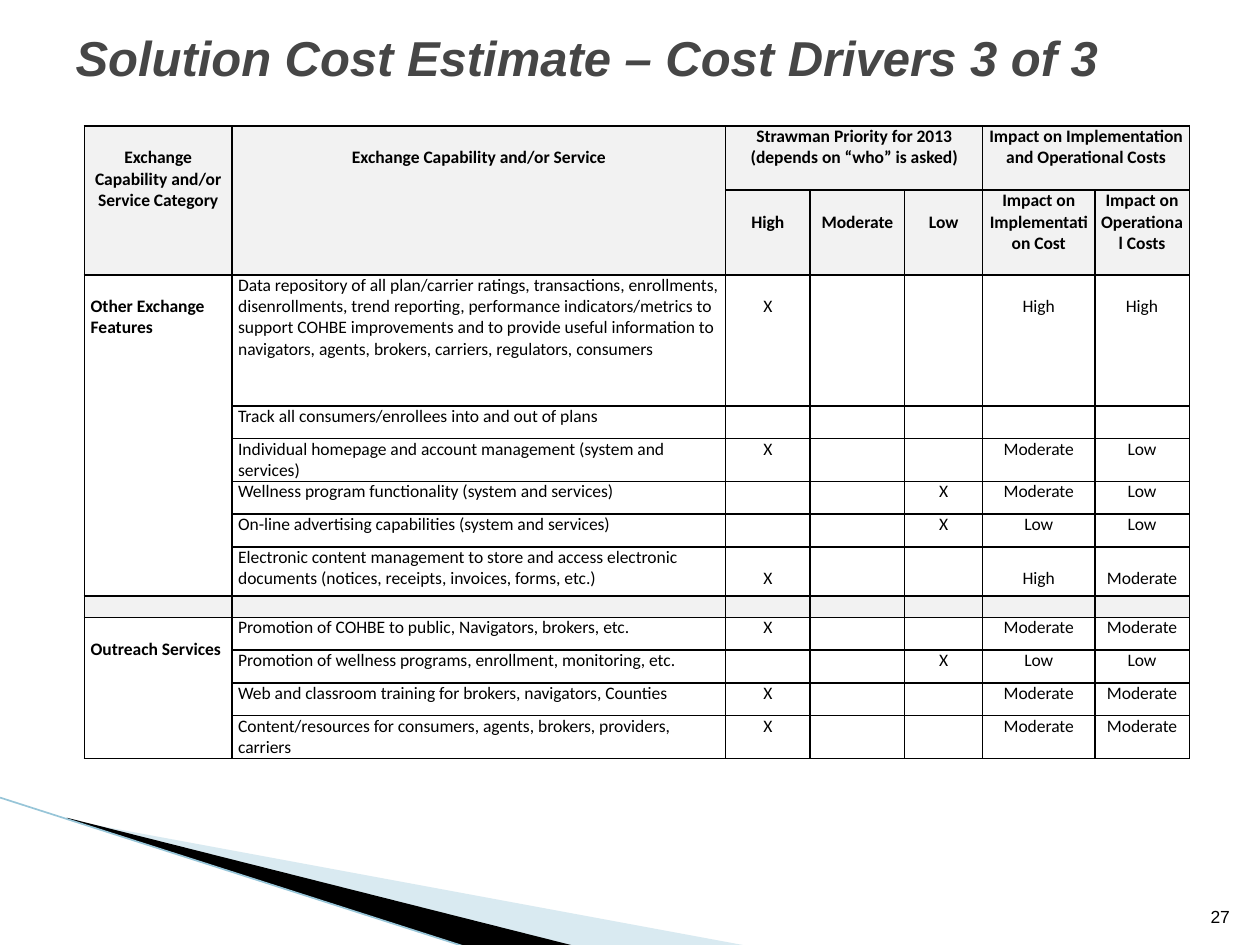
from dataclasses import dataclass

from lxml import etree
from pptx import Presentation
from pptx.dml.color import RGBColor
from pptx.enum.shapes import MSO_CONNECTOR
from pptx.enum.text import MSO_ANCHOR, PP_ALIGN
from pptx.oxml.ns import qn
from pptx.util import Inches, Pt

LEFT, CENTER, RIGHT = PP_ALIGN.LEFT, PP_ALIGN.CENTER, PP_ALIGN.RIGHT
MIDDLE, BOTTOM = MSO_ANCHOR.MIDDLE, MSO_ANCHOR.BOTTOM
STRAIGHT = MSO_CONNECTOR.STRAIGHT


@dataclass(frozen=True)
class Theme:
    title_font: str = "Arial"
    table_font: str = "Calibri"
    title_size: int = 28
    text_size: int = 10
    title: str = "464646"
    ink: str = "000000"
    shade: str = "F2F2F2"
    wedge: str = "A0CBDC"
    edge: str = "97C5D8"
    wedge_opacity: int = 40
    border_width: float = 1
    edge_width: float = 0.95


@dataclass(frozen=True)
class Box:
    left: float
    top: float
    width: float
    height: float

    def inches(self):
        return [Inches(v) for v in (self.left, self.top, self.width, self.height)]

    def point(self, x, y):
        return Inches(self.left + x), Inches(self.top + y)


THEME = Theme()
COLUMNS = [1.17, 3.92, 0.67, 0.75, 0.62, 0.89, 0.75]
ROWS = [0.51, 0.67, 1.04, 0.26, 0.34, 0.26, 0.26, 0.39, 0.17, 0.26, 0.26, 0.26, 0.34]
LINE_DROP = 0.17  # one line of table text
PRIORITIES = ["High", "Moderate", "Low"]
PRIORITY_COLUMN, IMPACT_COLUMN = 2, 5
SEPARATOR_ROW = 8

# Row, column, rows spanned, columns spanned, text, lowered by one line
HEADERS = [
    (0, 0, 2, 1, "Exchange Capability and/or Service Category", True),
    (0, 1, 2, 1, "Exchange Capability and/or Service", True),
    (0, 2, 1, 3, "Strawman Priority for 2013\n(depends on “who” is asked)", False),
    (0, 5, 1, 2, "Impact on Implementation and Operational Costs", False),
    (1, 5, 1, 1, "Impact on Implementation Cost", False),
    (1, 6, 1, 1, "Impact on Operational Costs", False),
] + [(1, PRIORITY_COLUMN + i, 1, 1, name, True) for i, name in enumerate(PRIORITIES)]

# First row, category, then service, priority, two impacts, marks lowered by one line
CATEGORIES = [
    (2, "Other Exchange Features", [
        ("Data repository of all plan/carrier ratings, transactions, enrollments, "
         "disenrollments, trend reporting, performance indicators/metrics to support "
         "COHBE improvements and to provide useful information to navigators, agents, "
         "brokers, carriers, regulators, consumers", "High", "High", "High", True),
        ("Track all consumers/enrollees into and out of plans", "", "", "", False),
        ("Individual homepage and account management (system and services)",
         "High", "Moderate", "Low", False),
        ("Wellness program functionality (system and services)",
         "Low", "Moderate", "Low", False),
        ("On-line advertising capabilities (system and services)",
         "Low", "Low", "Low", False),
        ("Electronic content management to store and access electronic documents "
         "(notices, receipts, invoices, forms, etc.)", "High", "High", "Moderate", True),
    ]),
    (9, "Outreach Services", [
        ("Promotion of COHBE to public, Navigators, brokers, etc.",
         "High", "Moderate", "Moderate", False),
        ("Promotion of wellness programs, enrollment, monitoring, etc.",
         "Low", "Low", "Low", False),
        ("Web and classroom training for brokers, navigators, Counties",
         "High", "Moderate", "Moderate", False),
        ("Content/resources for consumers, agents, brokers, providers, carriers",
         "High", "Moderate", "Moderate", False),
    ]),
]


def rgb(color):
    return RGBColor.from_string(color)


def style_para(para, align, font, size, color, bold=False, italic=False):
    para.alignment = align
    para.font.name, para.font.size = font, Pt(size)
    para.font.bold, para.font.italic = bold, italic
    para.font.color.rgb = rgb(color)


def add_swoosh(page, box):
    """Draw the two wedges and the thin edge in the lower left corner."""
    wedges = [
        (THEME.wedge, [(0.55, 0.18), (5.95, 1.18), (4.56, 1.18), (0.55, 0.17)]),
        (THEME.ink, [(0.53, 0.16), (4.57, 1.18), (3.72, 1.19), (0.54, 0.17)]),
    ]
    for color, corners in wedges:
        points = [box.point(x, y) for x, y in corners]
        builder = page.shapes.build_freeform(*points[0])
        builder.add_line_segments(points[1:], close=True)
        wedge = builder.convert_to_shape()
        wedge.shadow.inherit = False
        wedge.fill.solid()
        wedge.fill.fore_color.rgb = rgb(color)
        wedge.line.fill.background()
        if color == THEME.wedge:
            fill_color = wedge.fill._xPr.find(".//" + qn("a:srgbClr"))
            etree.SubElement(fill_color, qn("a:alpha"), val=str(THEME.wedge_opacity * 1000))
    edge = page.shapes.add_connector(
        STRAIGHT, *box.point(0, 0), *box.point(box.width, box.height))
    edge.line.color.rgb = rgb(THEME.edge)
    edge.line.width = Pt(THEME.edge_width)
    etree.SubElement(edge._element.spPr, qn("a:effectLst"))


def add_title(page, box, text):
    title = page.shapes.title
    title.left, title.top, title.width, title.height = box.inches()
    frame = title.text_frame
    frame.text = text
    frame.word_wrap = True
    frame.vertical_anchor = MIDDLE
    style_para(frame.paragraphs[0], LEFT, THEME.title_font, THEME.title_size,
               THEME.title, bold=True, italic=True)


def add_page_number(page, box, number):
    frame = page.shapes.add_textbox(*box.inches()).text_frame
    frame.word_wrap = True
    frame.vertical_anchor = BOTTOM
    frame.text = number
    style_para(frame.paragraphs[0], RIGHT, THEME.title_font, THEME.text_size, THEME.ink)


def add_borders(cell):
    properties = cell._tc.get_or_add_tcPr()
    for position, side in enumerate(("a:lnL", "a:lnR", "a:lnT", "a:lnB")):
        line = etree.Element(qn(side), w=str(Pt(THEME.border_width)))
        fill = etree.SubElement(line, qn("a:solidFill"))
        etree.SubElement(fill, qn("a:srgbClr"), val=THEME.ink)
        properties.insert(position, line)


def prepare_cell(cell, shaded):
    """Set margins, fill, borders and the height of the empty line."""
    cell.margin_left = cell.margin_right = Inches(0.05)
    cell.margin_top = cell.margin_bottom = 0
    if shaded:
        cell.fill.solid()
        cell.fill.fore_color.rgb = rgb(THEME.shade)
    else:
        cell.fill.background()
    add_borders(cell)
    empty_line = cell.text_frame.paragraphs[0]._p
    etree.SubElement(empty_line, qn("a:endParaRPr"), sz=str(THEME.text_size * 100))


def write_cell(cell, text, align=CENTER, bold=False, lowered=False):
    if not text:
        return
    cell.text = text
    cell.margin_top = Inches(LINE_DROP if lowered else 0)
    for para in cell.text_frame.paragraphs:
        style_para(para, align, THEME.table_font, THEME.text_size, THEME.ink, bold)


def add_cost_table(page, box):
    table = page.shapes.add_table(len(ROWS), len(COLUMNS), *box.inches()).table
    table.first_row = table.horz_banding = False
    for column, width in zip(table.columns, COLUMNS):
        column.width = Inches(width)
    for index, (row, height) in enumerate(zip(table.rows, ROWS)):
        row.height = Inches(height)
        for cell in row.cells:
            prepare_cell(cell, shaded=index < 2 or index == SEPARATOR_ROW)

    for row, column, down, across, text, lowered in HEADERS:
        cell = table.cell(row, column)
        if down * across > 1:
            cell.merge(table.cell(row + down - 1, column + across - 1))
        write_cell(cell, text, bold=True, lowered=lowered)

    for first, category, services in CATEGORIES:
        cell = table.cell(first, 0)
        cell.merge(table.cell(first + len(services) - 1, 0))
        write_cell(cell, category, LEFT, bold=True, lowered=True)
        for row, (service, priority, *impacts, lowered) in enumerate(services, first):
            write_cell(table.cell(row, 1), service, LEFT)
            marks = ["X" if name == priority else "" for name in PRIORITIES]
            for column, text in enumerate(marks + impacts, PRIORITY_COLUMN):
                write_cell(table.cell(row, column), text, lowered=lowered)


def main():
    deck = Presentation()
    deck.slide_width, deck.slide_height = Inches(10), Inches(7.5)
    page = deck.slides.add_slide(deck.slide_layouts[5])
    add_swoosh(page, Box(0, 6.33, 3.71, 1.19))
    add_title(page, Box(0.5, -0.17, 9, 1.25), "Solution Cost Estimate – Cost Drivers 3 of 3")
    add_page_number(page, Box(9.46, 7.01, 0.4, 0.4), "27")
    add_cost_table(page, Box(0.67, 1, sum(COLUMNS), sum(ROWS)))
    deck.save("out.pptx")


if __name__ == "__main__":
    main()
